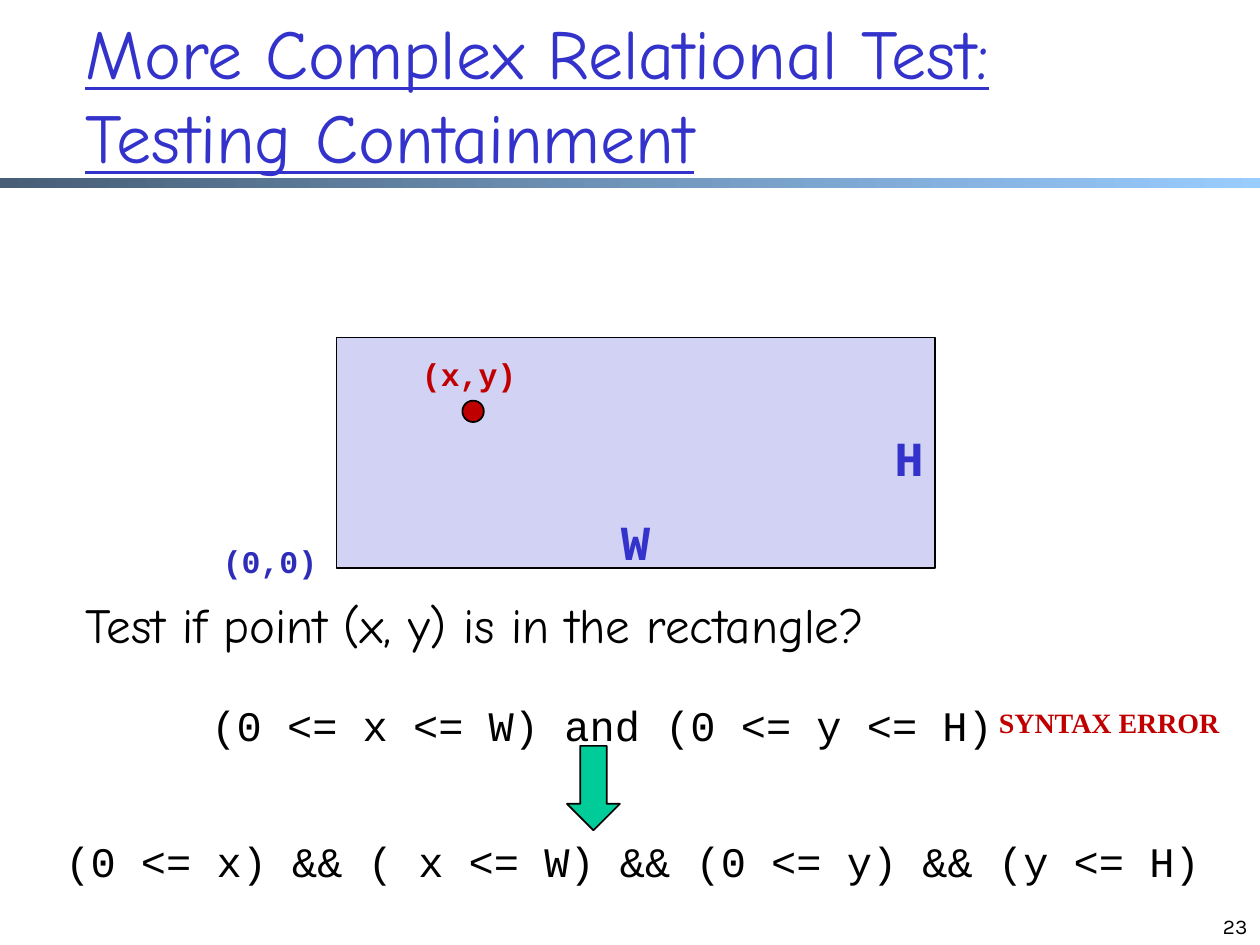
from pptx import Presentation
from pptx.dml.color import RGBColor
from pptx.enum.shapes import MSO_SHAPE as Preset
from pptx.enum.text import MSO_ANCHOR as Anchor, MSO_AUTO_SIZE as AutoSize, PP_ALIGN as Align
from pptx.util import Inches, Pt

COLORS = {
    "black": "000000",
    "blue": "3333CC",
    "dark_blue": "2D2DB9",
    "red": "C00000",
    "lavender": "D2D2F4",
    "green": "00CC99",
    "bar_start": "475E76",
    "bar_end": "99CCFF",
}
HEADING, CODE, NUMBER, WARNING = "Comic Neue", "Courier New", "Karla", "Times New Roman"


def color(name):
    """Return the named colour."""
    return RGBColor.from_string(COLORS[name])


def write(paragraph, text, size=24, font=CODE, ink="black", bold=False, underline=False,
          align=Align.LEFT, before=0):
    """Write formatted text into a paragraph."""
    paragraph.alignment = align
    paragraph.space_before = Pt(before)
    run = paragraph.add_run()
    run.text = text
    run.font.size = Pt(size)
    run.font.name = font
    run.font.bold = bold
    run.font.underline = underline
    run.font.color.rgb = color(ink)


class SlideBuilder:
    """Hold the slide and the style shared by its elements."""

    line_width = Pt(1)

    def __init__(self, slide):
        self.slide = slide

    def text(self, text, box, anchor=Anchor.TOP, wrap=True, **style):
        """Add a text box."""
        shape = self.slide.shapes.add_textbox(*map(Inches, box))
        frame = shape.text_frame
        frame.word_wrap = wrap
        frame.auto_size = AutoSize.NONE if wrap else AutoSize.SHAPE_TO_FIT_TEXT
        frame.vertical_anchor = anchor
        write(frame.paragraphs[0], text, **style)

    def label(self, text, box, **style):
        """Add an unwrapped label that fits its text."""
        self.text(text, box, wrap=False, **style)

    def shape(self, preset, box, fill):
        """Add an outlined preset shape."""
        shape = self.slide.shapes.add_shape(preset, *map(Inches, box))
        shape.shadow.inherit = False
        shape.fill.solid()
        shape.fill.fore_color.rgb = color(fill)
        shape.line.color.rgb = color("black")
        shape.line.width = self.line_width

    def gradient_bar(self, box, start, end):
        """Add a borderless bar that fades from left to right."""
        bar = self.slide.shapes.add_shape(Preset.RECTANGLE, *map(Inches, box))
        bar.shadow.inherit = False
        bar.line.fill.background()
        bar.fill.gradient()
        bar.fill.gradient_angle = 0
        for stop, name, position in zip(bar.fill.gradient_stops, (start, end), (0, 1)):
            stop.color.rgb = color(name)
            stop.position = position


def main():
    """Build and save the slide."""
    presentation = Presentation()
    presentation.slide_width, presentation.slide_height = Inches(10), Inches(7.5)
    builder = SlideBuilder(presentation.slides.add_slide(presentation.slide_layouts[6]))

    builder.gradient_bar((0, 1.41, 10, 0.08), "bar_start", "bar_end")
    builder.text("More Complex Relational Test: Testing Containment", (0.58, 0.12, 9.08, 1.25),
                 anchor=Anchor.MIDDLE, size=40, font=HEADING, ink="blue", underline=True)
    builder.text("Test if point (x, y) is in the rectangle?", (0.58, 4.67, 8.5, 2.17),
                 size=28, font=HEADING, before=5.6)
    builder.text("23", (7.67, 7, 2.33, 0.5), anchor=Anchor.BOTTOM,
                 size=12, font=NUMBER, align=Align.RIGHT)

    builder.shape(Preset.RECTANGLE, (2.67, 2.68, 4.75, 1.83), "lavender")
    for side, left, top in (("W", 4.83, 4.01), ("H", 7, 3.34)):
        builder.label(side, (left, top, 0.44, 0.57), size=28, ink="blue", bold=True)
    for point, left, top, ink in (("(x,y)", 3.25, 2.77, "red"), ("(0,0)", 1.67, 4.25, "dark_blue")):
        builder.label(point, (left, top, 0.96, 0.4), size=18, ink=ink, bold=True)
    builder.shape(Preset.OVAL, (3.67, 3.18, 0.17, 0.17), "red")

    builder.label("(0 <= x <= W) and (0 <= y <= H)", (1.58, 5.5, 6.46, 0.51))
    builder.label("SYNTAX ERROR", (7.83, 5.55, 1.97, 0.37),
                  size=16, font=WARNING, ink="red", bold=True)
    builder.label("(0 <= x) && ( x <= W) && (0 <= y) && (y <= H)", (0.42, 6.58, 9.48, 0.51))
    builder.shape(Preset.DOWN_ARROW, (4.5, 5.92, 0.42, 0.67), "green")

    presentation.save("out.pptx")


if __name__ == "__main__":
    main()
